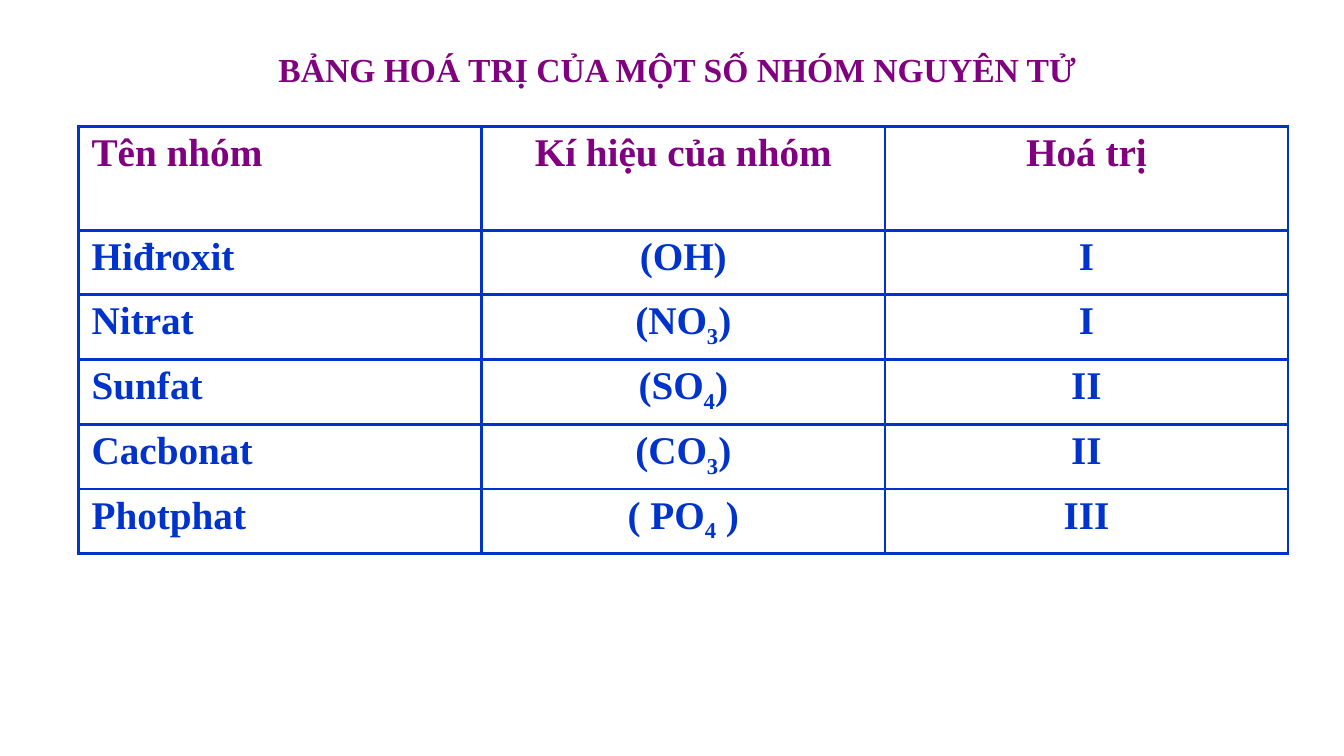
from lxml.etree import SubElement
from pptx import Presentation
from pptx.dml.color import RGBColor
from pptx.enum.text import MSO_ANCHOR, PP_ALIGN
from pptx.oxml.ns import qn
from pptx.util import Cm, Pt

PURPLE = RGBColor(0x80, 0x00, 0x80)
BLUE = RGBColor(0x00, 0x33, 0xCC)
FONT = "Times New Roman"

TITLE = "BẢNG HOÁ TRỊ CỦA MỘT SỐ NHÓM NGUYÊN TỬ"
HEADER = ("Tên nhóm", "Kí hiệu của nhóm", "Hoá trị")
# Each symbol is split into base, subscript and closing text.
GROUPS = [
    ("Hiđroxit", ("(OH)",), "I"),
    ("Nitrat", ("(NO", "3", ")"), "I"),
    ("Sunfat", ("(SO", "4", ")"), "II"),
    ("Cacbonat", ("(CO", "3", ")"), "II"),
    ("Photphat", ("( PO", "4", " )"), "III"),
]
HEADER_HEIGHT = Cm(2.62)
ROW_HEIGHT = Cm(1.63)


def style_paragraph(para, size, color, align):
    para.alignment = align
    para.font.name = FONT
    para.font.size = Pt(size)
    para.font.bold = True
    para.font.color.rgb = color


def add_title(page, left, top, width, height):
    box = page.shapes.add_textbox(left, top, width, height)
    frame = box.text_frame
    frame.word_wrap = True
    frame.vertical_anchor = MSO_ANCHOR.MIDDLE
    para = frame.paragraphs[0]
    para.text = TITLE
    style_paragraph(para, 24, PURPLE, PP_ALIGN.CENTER)


def add_borders(cell):
    properties = cell._tc.get_or_add_tcPr()
    for index, side in enumerate(("a:lnL", "a:lnR", "a:lnT", "a:lnB")):
        line = properties.makeelement(qn(side), {"w": str(Pt(2.25))})
        fill = SubElement(line, qn("a:solidFill"))
        SubElement(fill, qn("a:srgbClr"), val=str(BLUE))
        properties.insert(index, line)


def fill_cell(cell, parts, color, align):
    """Write the parts as runs, every second one as a subscript."""
    cell.fill.background()
    cell.margin_left = cell.margin_right = Cm(0.33)
    cell.margin_top = cell.margin_bottom = Cm(0.13)
    para = cell.text_frame.paragraphs[0]
    for index, part in enumerate(parts):
        span = para.add_run()
        span.text = part
        if index % 2:
            span.font._element.set("baseline", "-25000")
    style_paragraph(para, 28, color, align)
    add_borders(cell)


def add_valence_table(page, left, top, width):
    rows = [HEADER] + GROUPS
    height = HEADER_HEIGHT + ROW_HEIGHT * len(GROUPS)
    table = page.shapes.add_table(
        len(rows), len(HEADER), left, top, width, height).table
    table.horz_banding = False
    for column in table.columns:
        column.width = width // len(HEADER)
    for row_index, row in enumerate(rows):
        is_header = row_index == 0
        table.rows[row_index].height = HEADER_HEIGHT if is_header else ROW_HEIGHT
        for column_index, value in enumerate(row):
            parts = (value,) if isinstance(value, str) else value
            fill_cell(
                table.cell(row_index, column_index),
                parts,
                PURPLE if is_header else BLUE,
                PP_ALIGN.CENTER if column_index else PP_ALIGN.LEFT,
            )


def main():
    deck = Presentation()
    deck.slide_width, deck.slide_height = Cm(33.87), Cm(19.05)
    page = deck.slides.add_slide(deck.slide_layouts[6])
    add_title(page, Cm(2.82), Cm(1.1), Cm(28.5), Cm(1.27))
    add_valence_table(page, Cm(1.98), Cm(3.18), Cm(30.48))
    deck.save("out.pptx")


if __name__ == "__main__":
    main()
